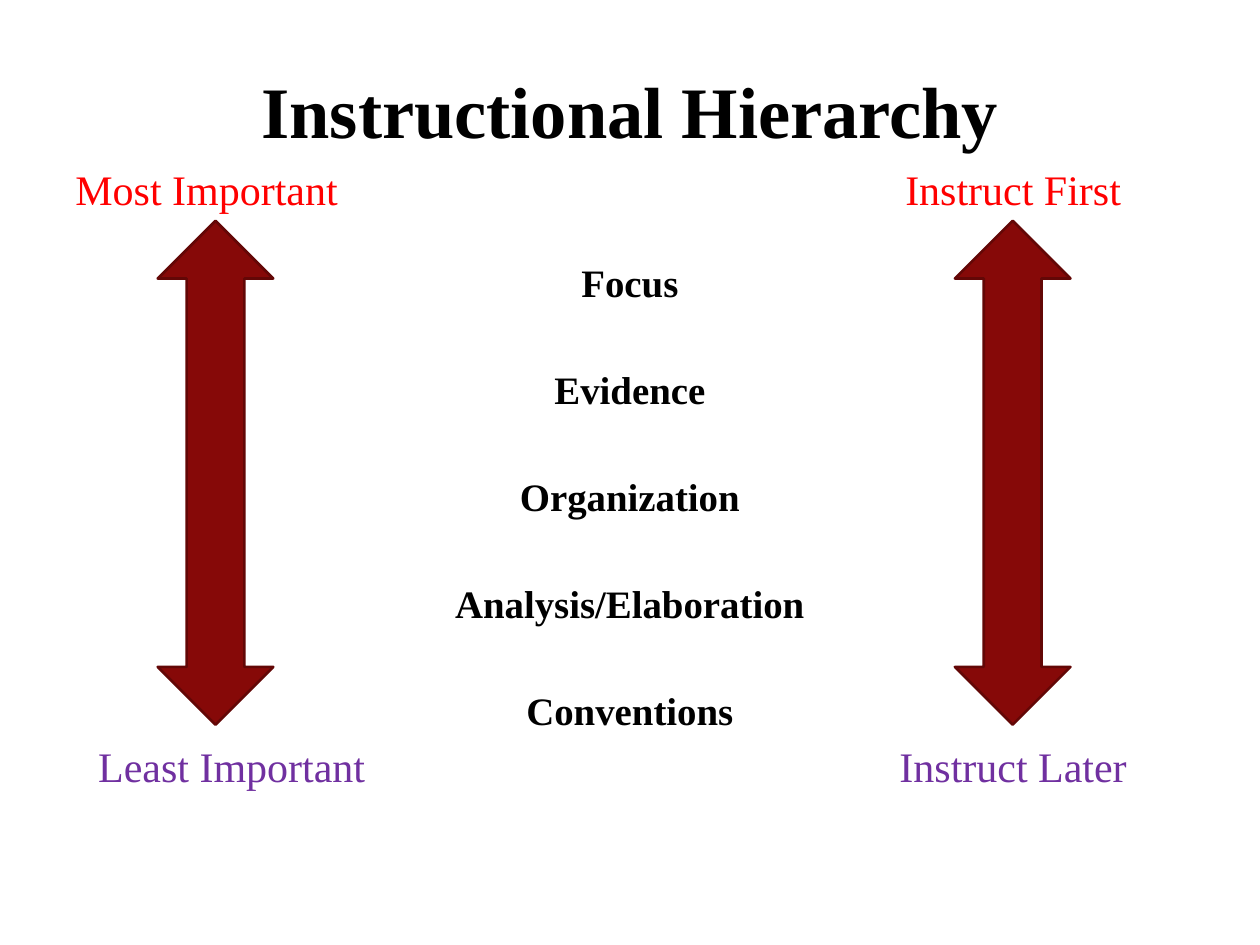
from pptx import Presentation
from pptx.dml.color import RGBColor
from pptx.enum.shapes import MSO_SHAPE
from pptx.enum.text import MSO_ANCHOR, PP_ALIGN
from pptx.util import Cm, Pt

TITLE = "Instructional Hierarchy"
LEVELS = ["Focus", "Evidence", "Organization", "Analysis/Elaboration", "Conventions"]
RED, PURPLE, BLACK = "FF0000", "7030A0", "000000"
LEFT, CENTER = PP_ALIGN.LEFT, PP_ALIGN.CENTER
TOP, BOTTOM = 3.18, 14.81
LABELS = [  # text, left, top, colour, alignment
    ("Most Important", 1.27, TOP, RED, LEFT),
    ("Least Important", 1.73, BOTTOM, PURPLE, LEFT),
    ("Instruct First", 17.35, TOP, RED, CENTER),
    ("Instruct Later", 17.35, BOTTOM, PURPLE, CENTER),
]
ARROWS = [3.18, 19.25]


def color(code):
    return RGBColor.from_string(code)


def style(par, size, code=BLACK, bold=False, align=CENTER):
    par.alignment = align
    for run in par.runs:
        font = run.font
        font.name, font.size, font.bold = "Times New Roman", Pt(size), bold
        font.color.rgb = color(code)


def add_text(slide, lines, left, top, width, height):
    box = slide.shapes.add_textbox(Cm(left), Cm(top), Cm(width), Cm(height))
    frame = box.text_frame
    frame.word_wrap = True
    frame.text = "\n".join(lines)
    return frame.paragraphs


def add_arrow(slide, left):
    arrow = slide.shapes.add_shape(
        MSO_SHAPE.UP_DOWN_ARROW, Cm(left), Cm(4.45), Cm(2.33), Cm(10.16))
    arrow.shadow.inherit = False
    arrow.fill.solid()
    arrow.fill.fore_color.rgb = color("860908")
    arrow.line.color.rgb = color("630706")
    arrow.line.width = Pt(1.5)


def main():
    prs = Presentation()
    prs.slide_width, prs.slide_height = Cm(25.4), Cm(19.05)
    slide = prs.slides.add_slide(prs.slide_layouts[5])

    title = slide.shapes.title
    title.left, title.top, title.width, title.height = Cm(2.54), Cm(1), Cm(20.32), Cm(2.41)
    title.text_frame.text = TITLE
    title.text_frame.vertical_anchor = MSO_ANCHOR.MIDDLE
    style(title.text_frame.paragraphs[0], 41.4, bold=True)

    levels = add_text(slide, LEVELS, 1.27, 5.1, 22.86, 9.84)
    for i, par in enumerate(levels):
        style(par, 22.2, bold=True)
        par.space_before = Pt(34.5 if i else 0)

    for left in ARROWS:
        add_arrow(slide, left)
    for text, left, top, code, align in LABELS:
        style(add_text(slide, [text], left, top, 6.15, 1.27)[0], 24, code, align=align)

    prs.save("out.pptx")


if __name__ == "__main__":
    main()
